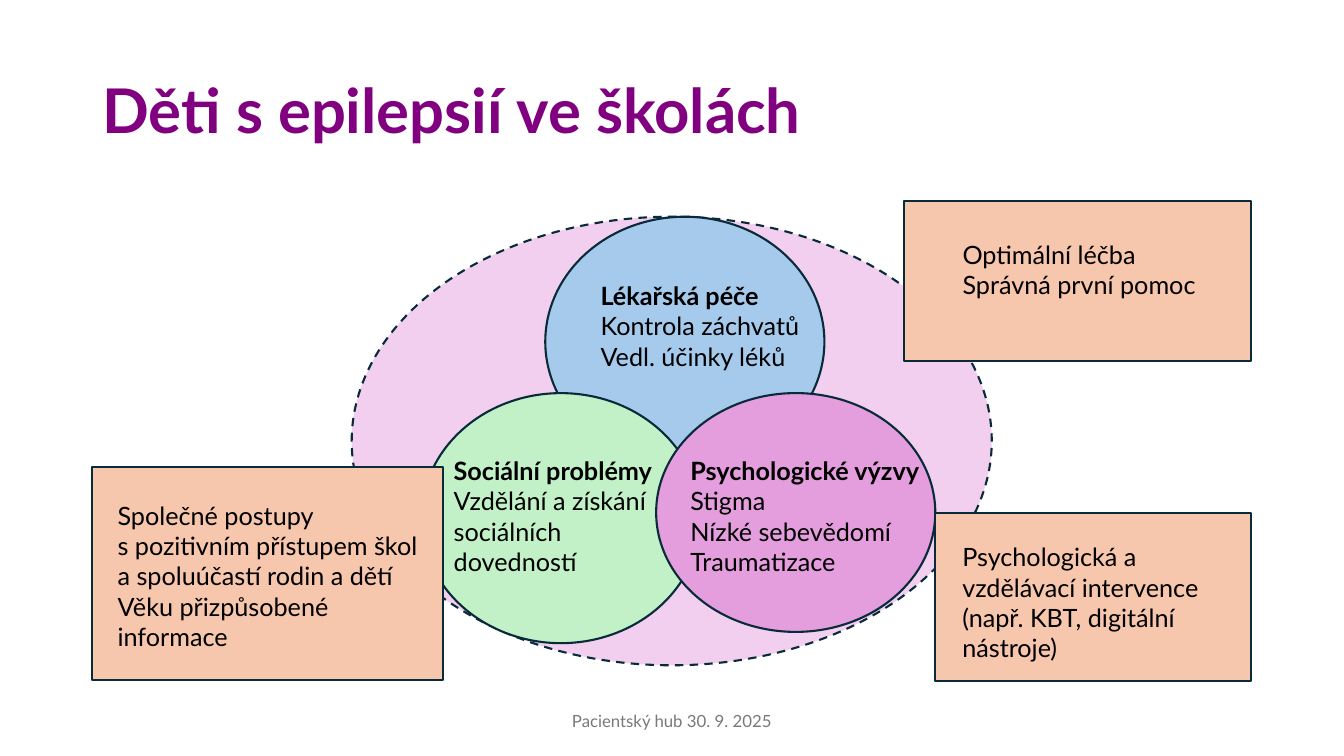
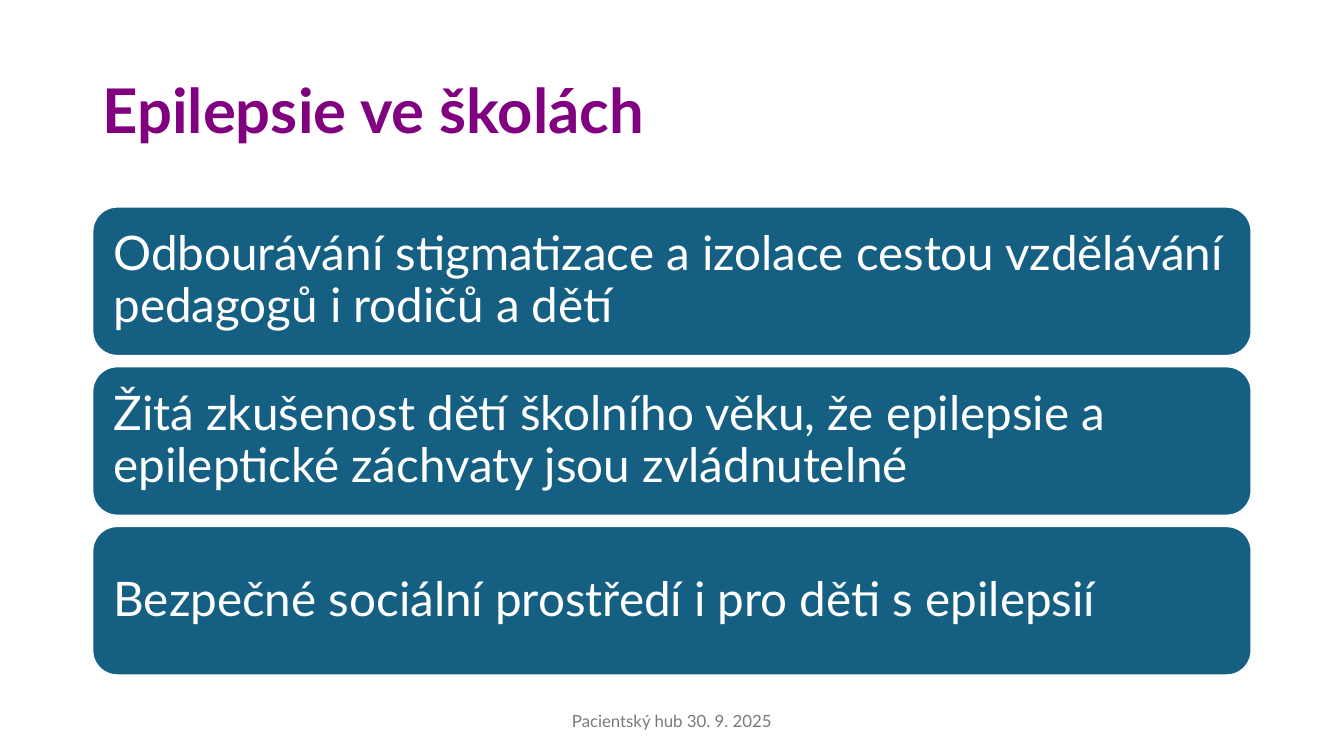
import pptx
import pptx.util
import pptx.dml.color
import pptx.enum.dml
import pptx.enum.shapes
import pptx.enum.text

Pt = pptx.util.Pt
MSO_SHAPE = pptx.enum.shapes.MSO_SHAPE
ANCHOR = pptx.enum.text.MSO_ANCHOR
ALIGN = pptx.enum.text.PP_ALIGN

FONT = "Lato"
PURPLE, INK, BLACK, WHITE, GREY = "800080", "092A39", "000000", "FFFFFF", "797979"
PINK, BLUE, GREEN, VIOLET, PEACH, TEAL = (
    "F2CFEE", "A6CAEC", "C2F1C8", "E59EDD", "F6C6AD", "156082")

TITLE_BOX = (66, 28.8, 828, 104.4)
FOOTER_BOX = (318, 500.4, 324, 28.8)
DIAGRAM_BOX = (66, 144, 828, 342.6)
BARS_BOX = (66, 147.6, 828, 334.8)


def rgb(color):
    return pptx.dml.color.RGBColor.from_string(color)


def points(box):
    return [Pt(value) for value in box]


def write(sp, lines, size, color, anchor=ANCHOR.TOP, align=ALIGN.LEFT,
          insets=(7.2, 3.6, 7.2, 3.6), spacing=None, bold_first=False):
    """Fill a shape with one paragraph per line; insets run left, top, right, bottom."""
    tf = sp.text_frame
    tf.word_wrap = True
    tf.auto_size = pptx.enum.text.MSO_AUTO_SIZE.NONE
    tf.vertical_anchor = anchor
    tf.margin_left, tf.margin_top, tf.margin_right, tf.margin_bottom = points(insets)
    for i, line in enumerate(lines):
        p = tf.add_paragraph() if i else tf.paragraphs[0]
        p.text = line
        p.alignment = align
        p.line_spacing = spacing
        p.font.name = FONT
        p.font.size = Pt(size)
        p.font.bold = bold_first and i == 0
        p.font.color.rgb = rgb(color)


def add_panel(slide, kind, box, fill, line=INK, dashed=False):
    sp = slide.shapes.add_shape(kind, *points(box))
    sp.shadow.inherit = False
    sp.fill.solid()
    sp.fill.fore_color.rgb = rgb(fill)
    sp.line.color.rgb = rgb(line)
    sp.line.width = Pt(1.5)
    if dashed:
        sp.line.dash_style = pptx.enum.dml.MSO_LINE.DASH
    return sp


def add_titled_slide(prs, title):
    slide = prs.slides.add_slide(prs.slide_layouts.get_by_name("Title Only"))
    sp = slide.shapes.title
    sp.left, sp.top, sp.width, sp.height = points(TITLE_BOX)
    write(sp, [title], 44, PURPLE, ANCHOR.MIDDLE, spacing=0.9, bold_first=True)
    footer = slide.shapes.add_textbox(*points(FOOTER_BOX))
    write(footer, ["Pacientský hub 30. 9. 2025"], 12, GREY, ANCHOR.MIDDLE, ALIGN.CENTER)
    return slide


def draw_diagram(slide, box):
    """Overlapping circles on a dashed oval, with a note beside each circle."""
    left, top = box[:2]

    def within(x, y, w, h):
        return left + x, top + y, w, h

    add_panel(slide, MSO_SHAPE.OVAL, within(185.2, 10.8, 457.2, 320.4), PINK, dashed=True)

    # circle box, fill, label offset and width, label lines
    circles = [
        ((323.5, 10.8, 199.4, 178.6), BLUE, (32.4, 42, 164),
         ["Lékařská péče", "Kontrola záchvatů", "Vedl. účinky léků"]),
        ((235, 136.8, 199.4, 178.6), GREEN, (16, 41, 163),
         ["Sociální problémy", "Vzdělání a získání sociálních dovedností"]),
        ((402.7, 136.8, 199.4, 170.6), VIOLET, (17.3, 41, 184),
         ["Psychologické výzvy", "Stigma", "Nízké sebevědomí", "Traumatizace"]),
    ]
    for circle, fill, _, _ in circles:
        add_panel(slide, MSO_SHAPE.OVAL, within(*circle), fill)
    for (x, y, _, _), _, (dx, dy, width), lines in circles:
        label = slide.shapes.add_textbox(*points(within(x + dx, y + dy, width, 94)))
        write(label, lines, 18, BLACK, bold_first=True)

    # note box, insets, lines
    notes = [
        ((579.8, -0.4, 247.8, 114.2), (41.8, 27.2, 18, 3.6),
         ["Optimální léčba", "Správná první pomoc"]),
        ((602.2, 222.5, 225.4, 120.2), (19.2, 20.5, 18, 3.6),
         ["Psychologická a vzdělávací intervence", "(např. KBT, digitální nástroje)"]),
        ((0, 189.4, 250.6, 152.6), (18, 23.8, 10.8, 3.6),
         ["Společné postupy\vs pozitivním přístupem škol a spoluúčastí rodin a dětí",
          "Věku přizpůsobené informace"]),
    ]
    for note, insets, lines in notes:
        sp = add_panel(slide, MSO_SHAPE.RECTANGLE, within(*note), PEACH)
        write(sp, lines, 18, BLACK, insets=insets)


def draw_bars(slide, box, texts, gap=7.5):
    """Equal rounded bars stacked to fill the box."""
    left, top, width, height = box
    bar_height = (height - gap * (len(texts) - 1)) / len(texts)
    for i, text in enumerate(texts):
        bar = (left, top + i * (bar_height + gap), width, bar_height)
        sp = add_panel(slide, MSO_SHAPE.ROUNDED_RECTANGLE, bar, TEAL, WHITE)
        write(sp, [text], 34, WHITE, ANCHOR.MIDDLE, insets=(10, 10, 10, 10), spacing=0.9)


def main():
    prs = pptx.Presentation()
    prs.slide_width, prs.slide_height = Pt(960), Pt(540)
    draw_diagram(add_titled_slide(prs, "Děti s epilepsií ve školách"), DIAGRAM_BOX)
    draw_bars(add_titled_slide(prs, "Epilepsie ve školách"), BARS_BOX, [
        "Odbourávání stigmatizace a izolace cestou vzdělávání pedagogů i rodičů a dětí",
        "Žitá zkušenost dětí školního věku, že epilepsie a epileptické záchvaty jsou zvládnutelné",
        "Bezpečné sociální prostředí i pro děti s epilepsií",
    ])
    prs.save("out.pptx")


if __name__ == "__main__":
    main()
